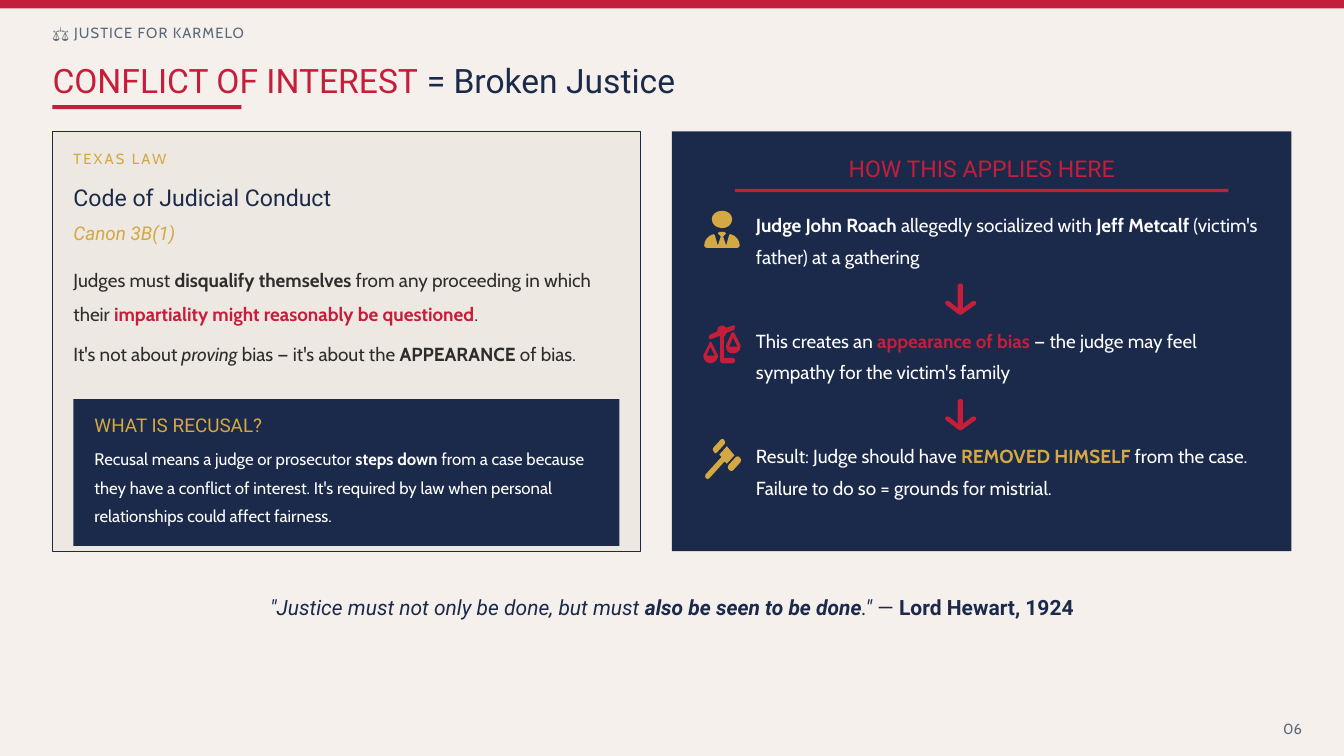
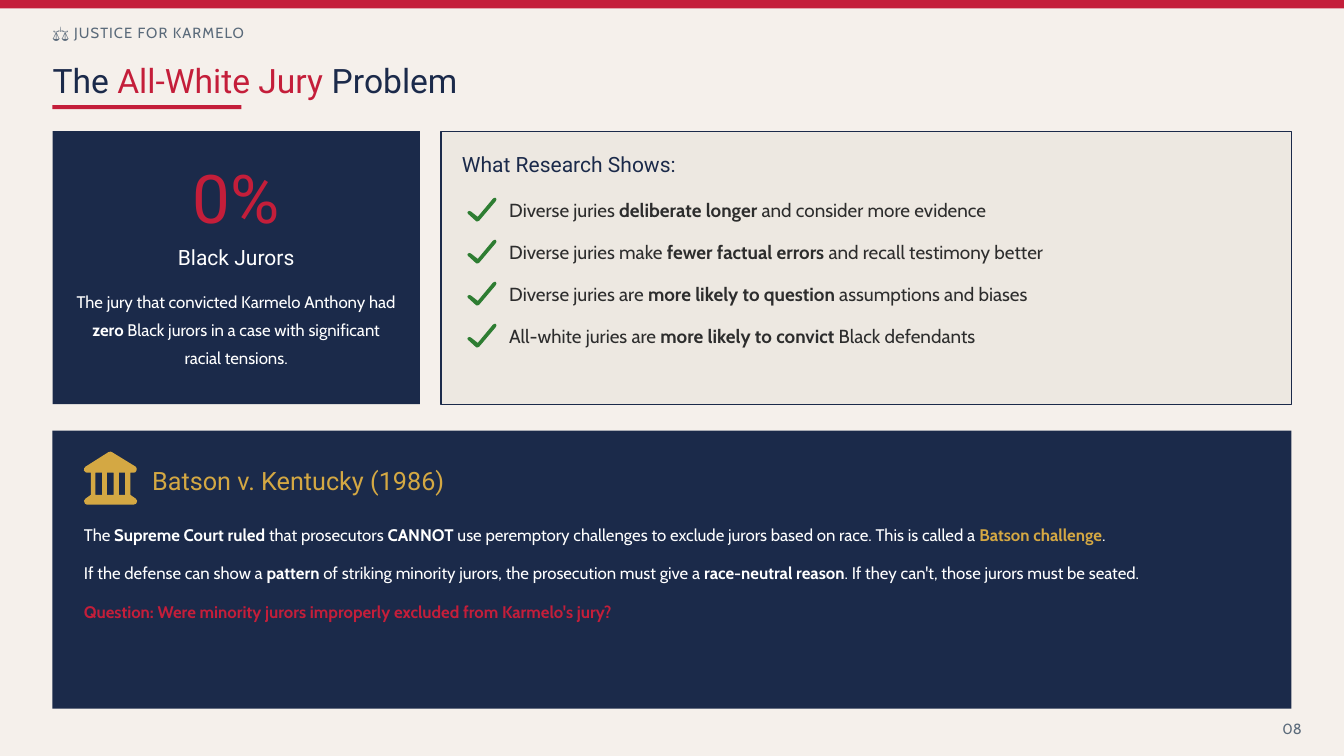
from dataclasses import dataclass

from lxml import etree
from pptx import Presentation
from pptx.dml.color import RGBColor
from pptx.enum.shapes import MSO_SHAPE
from pptx.enum.text import MSO_ANCHOR, MSO_AUTO_SIZE, PP_ALIGN
from pptx.oxml.ns import qn
from pptx.util import Inches, Pt

RECT = MSO_SHAPE.RECTANGLE
TOP, MIDDLE = MSO_ANCHOR.TOP, MSO_ANCHOR.MIDDLE
FIXED = MSO_AUTO_SIZE.NONE
LEFT, CENTER, RIGHT = PP_ALIGN.LEFT, PP_ALIGN.CENTER, PP_ALIGN.RIGHT
MOVES = {"M": "a:moveTo", "L": "a:lnTo", "C": "a:cubicBezTo", "Z": "a:close"}


@dataclass(frozen=True)
class Theme:
    paper: str = "F5F0EB"
    card: str = "EDE8E1"
    navy: str = "1B2A4A"
    red: str = "C41E3A"
    gold: str = "D4A843"
    green: str = "2E7D32"
    slate: str = "5A6A7A"
    ink: str = "2D2D2D"
    white: str = "FFFFFF"
    head: str = "Roboto"
    body: str = "Cabin"
    label: int = 14
    small: int = 16
    text: int = 18
    large: int = 20
    panel: int = 22
    case: int = 24
    title: int = 32
    stat: int = 64


T = Theme()
EDGE = 0.69
WIDE = 16.39
ROW = 1.74

MAN = (
    "M 25 24 C 17 24 11 19 11 12 C 11 6 17 1 25 1 C 32 1 38 6 38 12 "
    "C 38 19 32 24 25 24 Z M 21 29 L 28 29 C 29 29 30 30 30 31 "
    "C 30 32 30 32 29 32 L 26 35 L 30 47 L 30 47 L 34 33 C 34 32 35 32 36 32 "
    "C 43 34 48 40 48 47 C 48 49 46 50 45 50 L 4 50 C 3 50 1 49 1 47 "
    "C 1 40 6 34 13 32 C 14 32 15 32 15 33 L 19 47 L 19 47 L 23 35 L 20 32 "
    "C 19 32 19 32 19 31 C 19 30 20 29 21 29 Z"
)
ARROW = (
    "M 18 41 C 20 42 22 42 23 41 L 41 28 C 42 27 42 25 41 24 "
    "C 39 23 37 23 36 24 L 24 33 L 24 3 C 24 1 23 0 21 0 C 19 0 17 1 17 3 "
    "L 17 33 L 6 24 C 5 23 2 23 1 24 C 0 25 0 27 1 28 L 18 41 Z"
)
SCALES = (
    "M 40 6 C 41 5 42 3 42 2 C 41 0 40 -1 39 0 L 30 3 C 29 1 27 0 24 0 "
    "C 21 0 18 3 18 7 C 18 8 18 8 18 8 L 9 12 C 7 13 7 15 7 16 "
    "C 7 18 9 19 10 18 L 21 14 C 21 14 21 14 22 15 L 22 46 "
    "C 22 48 23 50 24 50 L 39 50 C 41 50 42 48 42 46 C 42 45 41 43 39 43 "
    "L 27 43 L 27 15 C 29 14 30 12 30 10 L 40 6 Z "
    "M 34 28 L 39 16 L 45 28 L 34 28 Z "
    "M 39 37 C 44 37 48 34 49 29 C 49 28 49 27 49 26 L 41 10 "
    "C 41 9 40 9 39 9 C 39 9 38 9 37 10 L 30 26 C 30 27 29 28 30 29 "
    "C 30 34 34 37 39 37 Z M 9 28 L 15 40 L 4 40 L 9 28 Z "
    "M 0 42 C 0 46 5 50 9 50 C 14 50 18 46 19 42 C 20 41 19 40 19 39 "
    "L 11 23 C 11 22 10 21 9 21 C 9 21 8 22 8 23 L 0 39 C 0 40 -1 41 0 42 Z"
)
GAVEL = (
    "M 14 15 L 13 13 C 12 12 12 10 13 9 L 23 -2 C 24 -3 25 -3 27 -2 "
    "L 28 0 C 29 1 29 3 28 4 L 18 15 C 17 17 15 17 14 15 Z "
    "M 24 21 L 21 18 L 31 7 L 41 19 L 31 30 L 28 27 L 8 49 "
    "C 7 51 5 51 3 49 C 2 48 2 45 3 44 L 24 21 Z M 33 37 C 32 36 32 34 33 32 "
    "L 43 21 C 45 20 46 20 47 21 L 49 23 C 50 24 50 26 49 28 L 39 39 "
    "C 38 40 36 40 35 39 L 33 37 Z"
)
CHECK = (
    "M 38 5 C 39 6 39 8 38 9 L 16 35 C 16 36 15 36 14 36 "
    "C 13 36 13 36 12 36 L 1 26 C 0 25 0 23 1 23 C 2 22 4 22 5 23 "
    "L 14 30 L 34 6 C 35 5 37 4 38 5 Z"
)
COURT = (
    "M 32 1 C 34 0 36 0 37 1 L 68 20 C 69 21 70 23 69 25 "
    "C 69 27 67 28 65 28 L 61 28 L 61 57 L 68 62 C 69 63 70 64 70 65 "
    "C 70 68 68 70 65 70 L 4 70 C 2 70 0 68 0 65 C 0 64 1 63 2 62 "
    "L 9 57 L 9 57 L 9 28 L 4 28 C 3 28 1 27 0 25 C 0 23 0 21 2 20 L 32 1 Z "
    "M 46 28 L 46 57 L 54 57 L 54 28 L 46 28 Z "
    "M 30 57 L 39 57 L 39 28 L 30 28 L 30 57 Z "
    "M 15 28 L 15 57 L 24 57 L 24 28 L 15 28 Z"
)


def tint(color):
    return RGBColor.from_string(color)


def snap(size):
    return Inches(round(size * 72) / 72)


def paint(shape, fill, line=None):
    shape.shadow.inherit = False
    shape.fill.solid()
    shape.fill.fore_color.rgb = tint(fill)
    if line:
        shape.line.color.rgb = tint(line)
        shape.line.width = Pt(1)
    else:
        shape.line.fill.background()


def box(slide, left, top, width, height, fill, line=None):
    shape = slide.shapes.add_shape(RECT, *map(snap, (left, top, width, height)))
    paint(shape, fill, line)


def icon(slide, outline, left, top, size, color):
    x, y, side = snap(left), snap(top), snap(size)
    pen = slide.shapes.build_freeform(x, y)
    pen.add_line_segments([(x + side, y), (x + side, y + side), (x, y + side)])
    shape = pen.convert_to_shape()
    paint(shape, color)
    track = next(shape._element.iter(qn("a:path")))
    track.clear()
    track.set("w", str(round(size * 100)))
    track.set("h", str(round(size * 100)))
    nums = iter(outline.split())
    for mark in nums:
        move = etree.SubElement(track, qn(MOVES[mark]))
        for _ in range({"C": 3, "Z": 0}.get(mark, 1)):
            etree.SubElement(move, qn("a:pt"), x=next(nums), y=next(nums))


def write(frame, paras, size, color, font, align=LEFT, lead=1.2, gap=0,
          space=0, anchor=MIDDLE, wrap=False):
    frame.auto_size = FIXED
    frame.word_wrap = wrap
    frame.vertical_anchor = anchor
    frame.margin_left = frame.margin_right = frame.margin_top = frame.margin_bottom = 0
    for index, runs in enumerate(paras):
        para = frame.add_paragraph() if index else frame.paragraphs[0]
        para.alignment = align
        para.line_spacing = lead
        if index:
            para.space_before = Pt(gap)
        for words, *style in runs:
            run = para.add_run()
            run.text = words
            run.font.name = font
            run.font.size = Pt(size)
            run.font.bold = "b" in style
            run.font.italic = "i" in style
            hues = [item for item in style if item not in ("b", "i")]
            run.font.color.rgb = tint(hues[0] if hues else color)
            if space:
                run.font._element.set("spc", str(space * 100))


def text(slide, left, top, width, height, paras, size, color, font=T.body, **look):
    shape = slide.shapes.add_textbox(*map(snap, (left, top, width, height)))
    write(shape.text_frame, paras, size, color, font, **look)


def line(slide, left, top, width, height, words, size, color, font=T.head, **look):
    text(slide, left, top, width, height, [[(words,)]], size, color, font, **look)


def prose(slide, left, top, width, height, paras, size, color, **look):
    text(slide, left, top, width, height, paras, size, color,
         anchor=TOP, wrap=True, **look)


def page(deck, title, number):
    slide = deck.slides.add_slide(deck.slide_layouts[5])
    box(slide, 0, 0, 17.78, 0.11, T.red)
    line(slide, EDGE, 0.25, 4.17, 0.31, "⚖️ JUSTICE FOR KARMELO",
         T.label, T.slate, T.body, space=1)
    head = slide.shapes.title
    head.left, head.top, head.width, head.height = map(snap, (EDGE, 0.69, 11.11, 0.62))
    write(head.text_frame, [title], T.title, T.navy, T.head)
    box(slide, EDGE, 1.39, 2.5, 0.06, T.red)
    line(slide, 16.53, 9.44, 0.69, 0.35, number, T.label, T.slate, T.body, align=RIGHT)
    return slide


def law(slide):
    box(slide, EDGE, ROW, 7.78, 5.56, T.card, T.navy)
    line(slide, 0.97, 1.88, 3.47, 0.39, "TEXAS LAW", T.label, T.gold, T.body, space=2)
    line(slide, 0.97, 2.33, 7.22, 0.49, "Code of Judicial Conduct", T.panel, T.navy)
    text(slide, 0.97, 2.85, 7.22, 0.42, [[("Canon 3B(1)", "i")]], T.text, T.gold, T.head)
    prose(slide, 0.97, 3.4, 7.22, 1.67, [
        [("Judges must ",), ("disqualify themselves", "b"),
         (" from any proceeding in which their ",),
         ("impartiality might reasonably be questioned", "b", T.red), (".",)],
        [("It's not about ",), ("proving", "i"), (" bias — it's about the ",),
         ("APPEARANCE", "b"), (" of bias.",)],
    ], T.text, T.ink, lead=1.5, gap=6)
    box(slide, 0.97, 5.28, 7.22, 1.94, T.navy)
    line(slide, 1.25, 5.39, 6.67, 0.42, "WHAT IS RECUSAL?", T.text, T.gold)
    prose(slide, 1.25, 5.83, 6.67, 1.32, [
        [("Recusal means a judge or prosecutor ",), ("steps down", "b"),
         (" from a case because they have a conflict of interest. It's required by law "
          "when personal relationships could affect fairness.",)],
    ], T.small, T.white, lead=1.4)


def chain(slide):
    box(slide, 8.89, ROW, 8.19, 5.56, T.navy)
    line(slide, 9.17, 1.94, 7.64, 0.49, "HOW THIS APPLIES HERE", T.panel, T.red, align=CENTER)
    box(slide, 9.72, 2.5, 6.53, 0.04, T.red)
    steps = [
        (MAN, T.gold, [("Judge John Roach", "b"), (" allegedly socialized with ",),
                       ("Jeff Metcalf", "b"), (" (victim's father) at a gathering",)]),
        (SCALES, T.red, [("This creates an ",), ("appearance of bias", "b", T.red),
                         (" — the judge may feel sympathy for the victim's family",)]),
        (GAVEL, T.gold, [("Result: Judge should have ",), ("REMOVED HIMSELF", "b", T.gold),
                         (" from the case. Failure to do so = grounds for mistrial.",)]),
    ]
    for index, (sign, color, runs) in enumerate(steps):
        top = 2.78 + index * 1.53
        if index:
            icon(slide, ARROW, 12.5, top - 0.56, 0.42, T.red)
        icon(slide, sign, 9.31, top, 0.5, color)
        prose(slide, 10, top - 0.07, 6.81, 1.04, [runs], T.text, T.white, lead=1.4)


def stat(slide):
    box(slide, EDGE, ROW, 4.86, 3.61, T.navy)
    line(slide, 0.97, 1.94, 4.31, 1.11, "0%", T.stat, T.red, align=CENTER)
    line(slide, 0.97, 3.12, 4.31, 0.49, "Black Jurors", T.large, T.white, align=CENTER)
    prose(slide, 0.97, 3.75, 4.31, 1.39, [
        [("The jury that convicted Karmelo Anthony had ",), ("zero", "b"),
         (" Black jurors in a case with significant racial tensions.",)],
    ], T.small, T.white, lead=1.4, align=CENTER)


def study(slide):
    box(slide, 5.83, ROW, 11.25, 3.61, T.card, T.navy)
    line(slide, 6.11, 1.92, 5.56, 0.44, "What Research Shows:", T.large, T.navy)
    facts = [
        ("Diverse juries ", "deliberate longer", " and consider more evidence"),
        ("Diverse juries make ", "fewer factual errors", " and recall testimony better"),
        ("Diverse juries are ", "more likely to question", " assumptions and biases"),
        ("All-white juries are ", "more likely to convict", " Black defendants"),
    ]
    for index, (start, key, end) in enumerate(facts):
        top = 2.5 + index * 5 / 9
        icon(slide, CHECK, 6.18, top + 0.07, 0.39, T.green)
        text(slide, 6.74, top, 10, 0.49, [[(start,), (key, "b"), (end,)]],
             T.text, T.ink, wrap=True)


def ruling(slide):
    box(slide, EDGE, 5.69, WIDE, 3.68, T.navy)
    icon(slide, COURT, 1.11, 5.97, 0.69, T.gold)
    line(slide, 2.01, 5.97, 6.94, 0.69, "Batson v. Kentucky (1986)", T.case, T.gold)
    prose(slide, 1.11, 6.81, 15.69, 2.5, [
        [("The ",), ("Supreme Court ruled", "b"), (" that prosecutors ",), ("CANNOT", "b"),
         (" use peremptory challenges to exclude jurors based on race. This is called a ",),
         ("Batson challenge", "b", T.gold), (".",)],
        [("If the defense can show a ",), ("pattern", "b"),
         (" of striking minority jurors, the prosecution must give a ",),
         ("race-neutral reason", "b"), (". If they can't, those jurors must be seated.",)],
        [("Question: Were minority jurors improperly excluded from Karmelo's jury?", "b", T.red)],
    ], T.small, T.white, lead=1.5, gap=8)


def main():
    deck = Presentation()
    deck.slide_width, deck.slide_height = snap(17.78), snap(10)
    back = deck.slide_master.background.fill
    back.solid()
    back.fore_color.rgb = tint(T.paper)

    slide = page(deck, [("CONFLICT OF INTEREST", T.red), (" = Broken Justice",)], "06")
    law(slide)
    chain(slide)
    text(slide, EDGE, 7.57, WIDE, 0.83, [
        [("\"Justice must not only be done, but must ", "i"),
         ("also be seen to be done", "b", "i"), (".\"", "i"), (" — ",),
         ("Lord Hewart, 1924", "b")],
    ], T.large, T.navy, T.head, align=CENTER, lead=1.3, wrap=True)

    slide = page(deck, [("The ",), ("All-White Jury", T.red), (" Problem",)], "08")
    stat(slide)
    study(slide)
    ruling(slide)
    deck.save("out.pptx")


if __name__ == "__main__":
    main()
